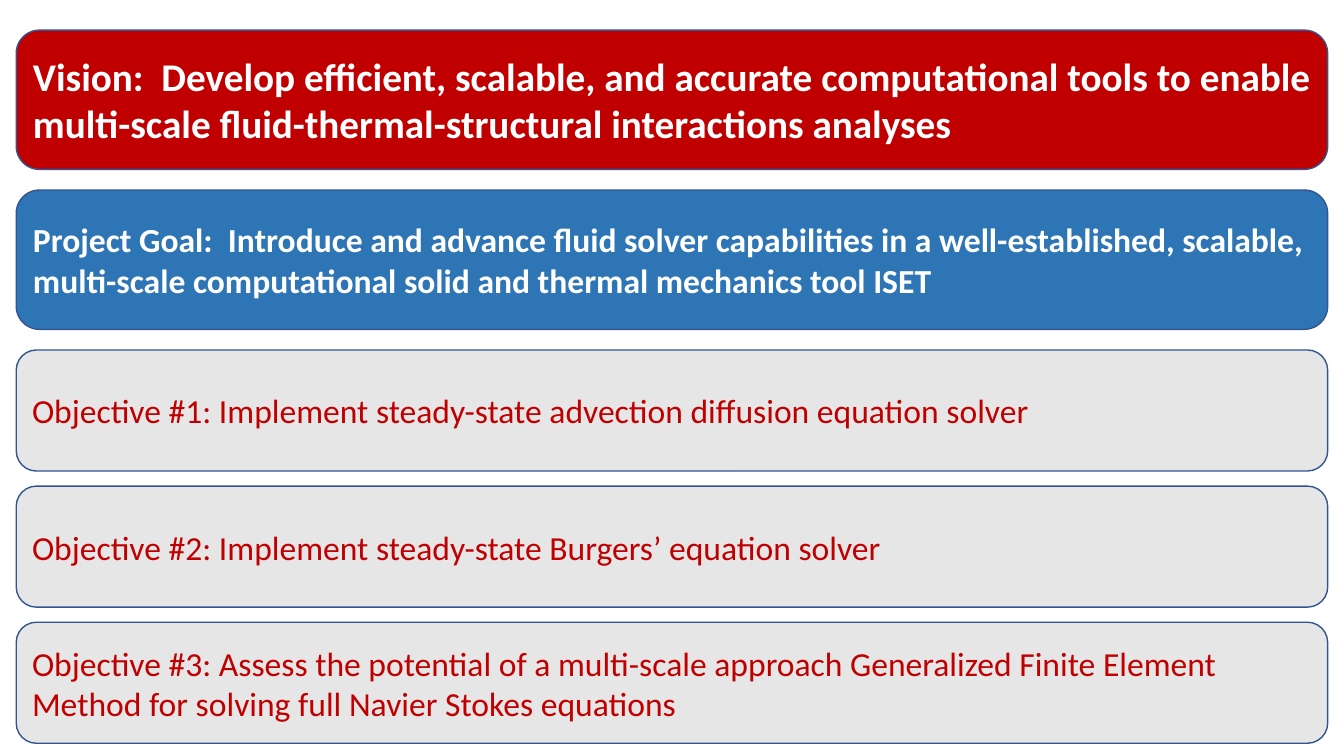
from pptx import Presentation
from pptx.dml.color import RGBColor
from pptx.enum import shapes, text
from pptx.util import Cm, Pt

VISION = {"fill": "C00000", "ink": "FFFFFF", "size": 28, "bold": True, "height": 3.51, "gap": 0.52}
GOAL = {**VISION, "fill": "2E75B6", "size": 24}
OBJECTIVE = {"fill": "E7E6E6", "ink": "C00000", "size": 24, "bold": False, "height": 3.05, "gap": 0.38}

BANNERS = [
    (VISION, "Vision:  Develop efficient, scalable, and accurate computational tools "
             "to enable multi-scale fluid-thermal-structural interactions analyses"),
    (GOAL, "Project Goal:  Introduce and advance fluid solver capabilities in a well-established, "
           "scalable, multi-scale computational solid and thermal mechanics tool ISET"),
    (OBJECTIVE, "Objective #1: Implement steady-state advection diffusion equation solver"),
    (OBJECTIVE, "Objective #2: Implement steady-state Burgers’ equation solver"),
    (OBJECTIVE, "Objective #3: Assess the potential of a multi-scale approach Generalized "
                "Finite Element Method for solving full Navier Stokes equations"),
]
OUTLINE = "325491"
LEFT, FIRST_TOP, WIDTH = 0.41, 0.76, 33.05


def paint(color_format, color):
    color_format.rgb = RGBColor.from_string(color)


def add_banner(page, top, style, wording):
    box = page.shapes.add_shape(
        shapes.MSO_SHAPE.ROUNDED_RECTANGLE, Cm(LEFT), Cm(top), Cm(WIDTH), Cm(style["height"]))
    box.shadow.inherit = False
    box.fill.solid()
    paint(box.fill.fore_color, style["fill"])
    paint(box.line.color, OUTLINE)
    box.line.width = Pt(1)
    frame = box.text_frame
    frame.word_wrap = True
    frame.vertical_anchor = text.MSO_ANCHOR.MIDDLE
    frame.text = wording
    para = frame.paragraphs[0]
    para.alignment = text.PP_ALIGN.LEFT
    font = para.runs[0].font
    font.name = "Calibri"
    font.size = Pt(style["size"])
    font.bold = style["bold"]
    paint(font.color, style["ink"])


def main():
    deck = Presentation()
    deck.slide_width, deck.slide_height = Cm(33.87), Cm(19.05)
    page = deck.slides.add_slide(deck.slide_layouts[6])
    top = FIRST_TOP
    for style, wording in BANNERS:
        add_banner(page, top, style, wording)
        top += style["height"] + style["gap"]
    deck.save("out.pptx")


if __name__ == "__main__":
    main()
